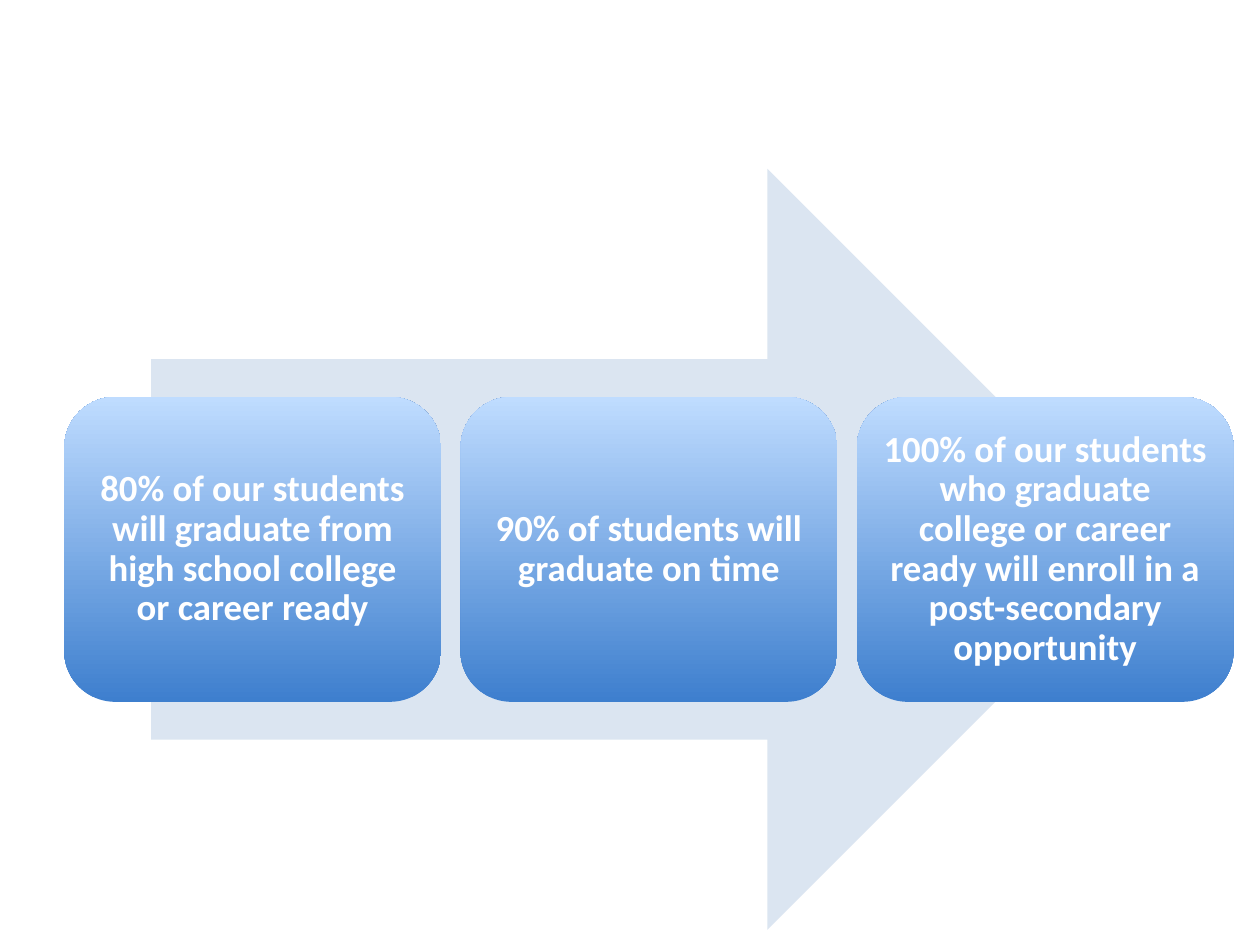
import pptx
import pptx.util
import pptx.dml.color
import pptx.enum.shapes
import pptx.enum.text

RGBColor = pptx.dml.color.RGBColor
Inches = pptx.util.Inches
Pt = pptx.util.Pt
Kind = pptx.enum.shapes.MSO_SHAPE

PALE = RGBColor(0xDB, 0xE5, 0xF1)
DARK = RGBColor(0x3E, 0x7F, 0xCE)
LIGHT = RGBColor(0xBF, 0xDC, 0xFF)
WHITE = RGBColor(0xFF, 0xFF, 0xFF)

# Card grid, in inches
LEFT, TOP = 0.51, 3.15
WIDE, HIGH = 2.99, 2.42
STEP = 3.145

GOALS = [
    "80% of our students will graduate from high school college or career ready",
    "90% of students will graduate on time",
    "100% of our students who graduate college or career ready "
    "will enroll in a post-secondary opportunity",
]


class Deck:
    """Holds the style and the current slide."""

    font = "Calibri"
    size = Pt(21)
    inset = Inches(0.09)

    def __init__(self, slide):
        self.slide = slide

    def shape(self, kind, left, top, wide, high, bend):
        box = [Inches(n) for n in (left, top, wide, high)]
        shape = self.slide.shapes.add_shape(kind, *box)
        shape.shadow.inherit = False
        shape.line.fill.background()
        for i, part in enumerate(bend):
            shape.adjustments[i] = part
        return shape

    def arrow(self, left, top, wide, high):
        arrow = self.shape(Kind.RIGHT_ARROW, left, top, wide, high, (0.5, 0.5))
        arrow.fill.solid()
        arrow.fill.fore_color.rgb = PALE

    def card(self, col, text):
        card = self.shape(Kind.ROUNDED_RECTANGLE, LEFT + col * STEP, TOP,
                          WIDE, HIGH, (0.167,))
        # Dark at the bottom, light at the top
        card.fill.gradient()
        card.fill.gradient_angle = 90
        for stop, tint in zip(card.fill.gradient_stops, (DARK, LIGHT)):
            stop.color.rgb = tint
        self.label(card.text_frame, text)

    def label(self, frame, text):
        frame.word_wrap = True
        frame.vertical_anchor = pptx.enum.text.MSO_ANCHOR.MIDDLE
        frame.margin_left = frame.margin_right = self.inset
        frame.margin_top = frame.margin_bottom = self.inset
        para = frame.paragraphs[0]
        para.text = text
        para.alignment = pptx.enum.text.PP_ALIGN.CENTER
        para.line_spacing = 0.9
        para.space_after = Pt(7.3)
        para.font.name = self.font
        para.font.size = self.size
        para.font.bold = True
        para.font.color.rgb = WHITE


def main():
    show = pptx.Presentation()
    show.slide_width, show.slide_height = Inches(10), Inches(7.5)
    deck = Deck(show.slides.add_slide(show.slide_layouts[6]))

    # Arrow behind the goals
    deck.arrow(1.2, 1.34, 7.91, 6.04)

    # Goals, left to right
    for col, goal in enumerate(GOALS):
        deck.card(col, goal)

    show.save("out.pptx")


if __name__ == "__main__":
    main()
